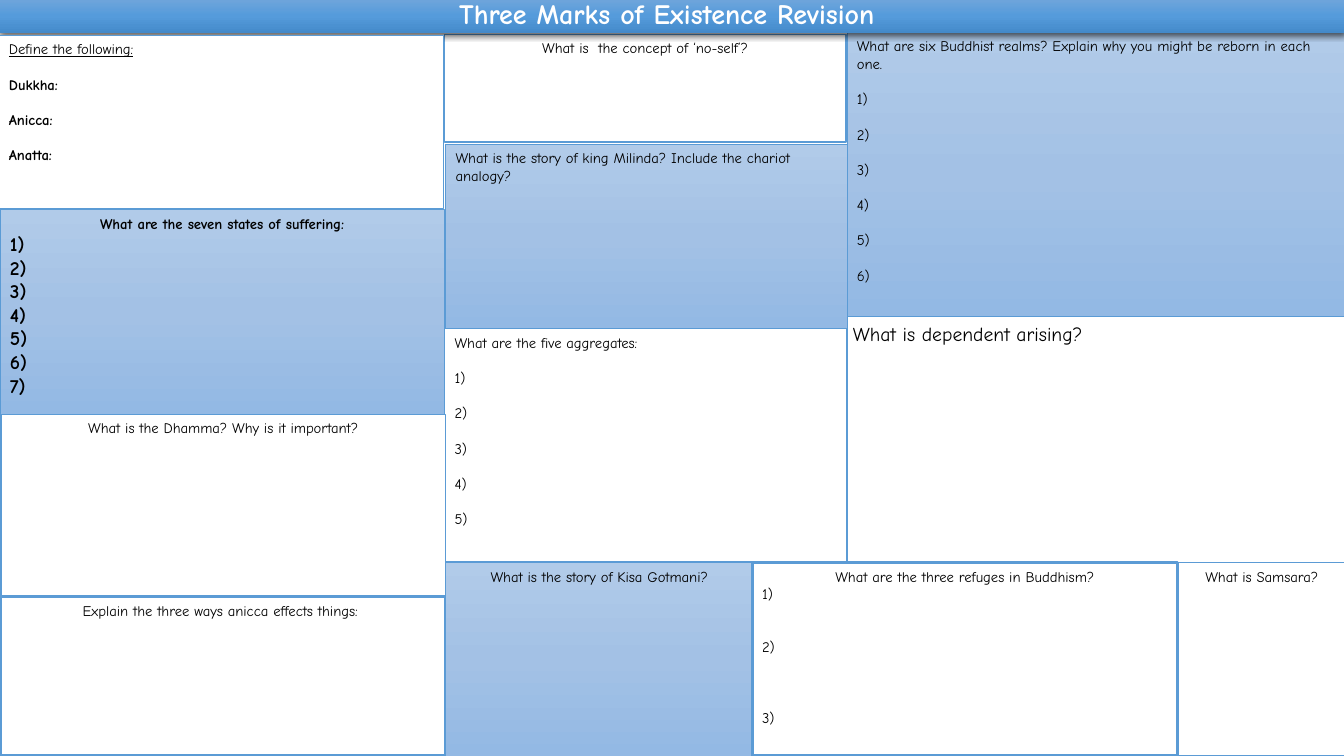
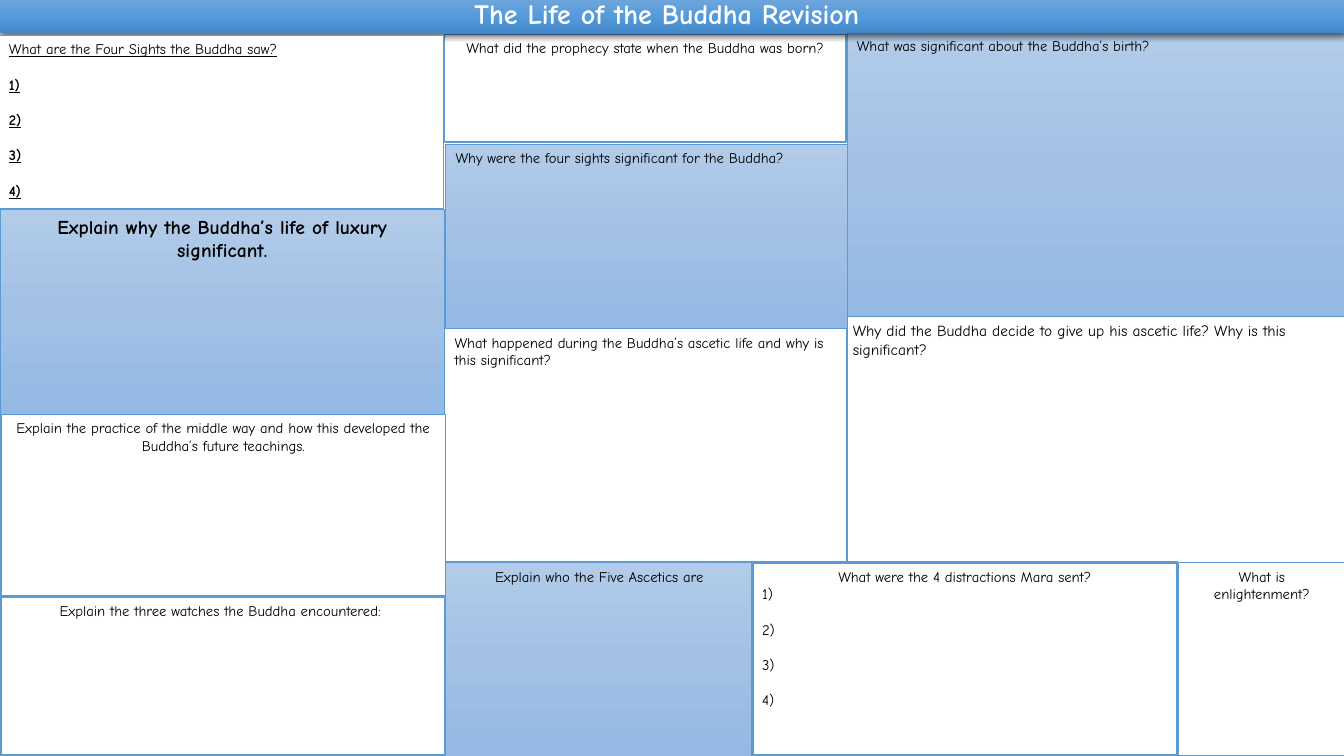
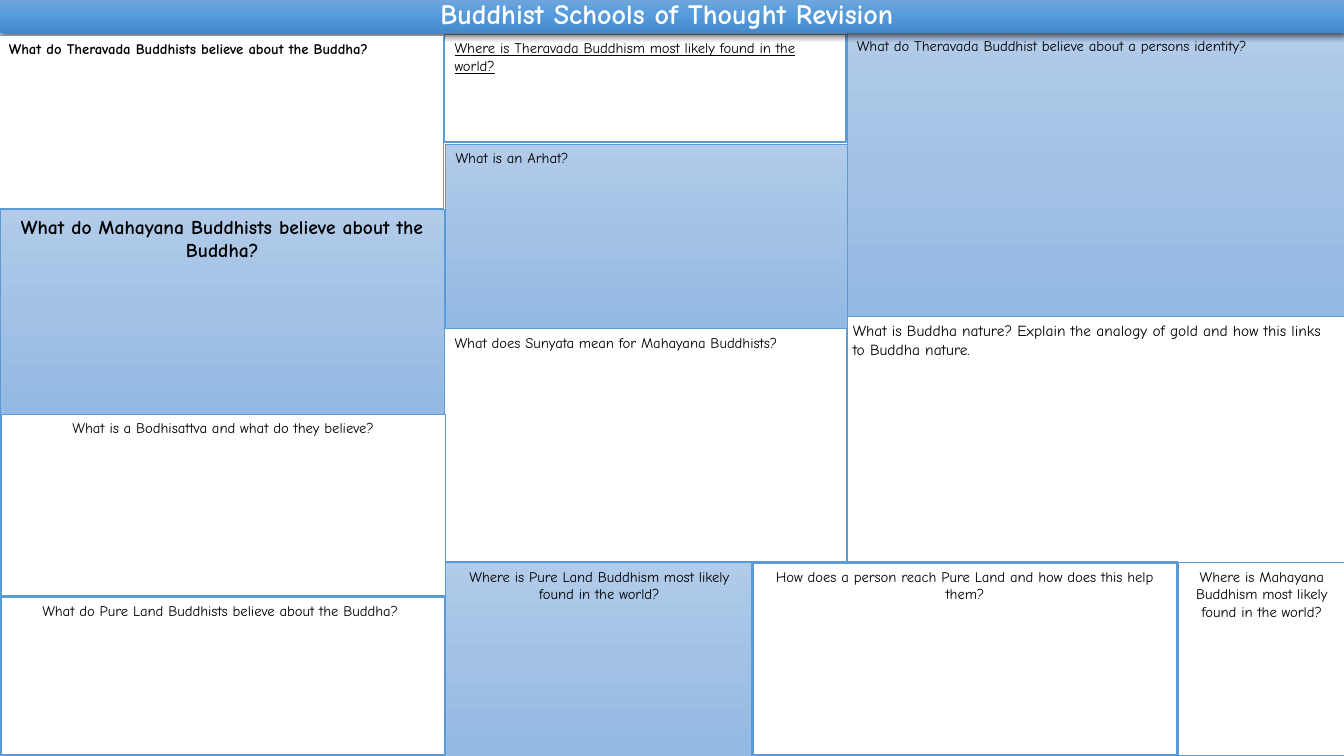
from dataclasses import dataclass
from pptx import Presentation
from pptx.dml.color import RGBColor
from pptx.enum.shapes import MSO_SHAPE
from pptx.enum.text import MSO_ANCHOR, PP_ALIGN
from pptx.oxml import parse_xml
from pptx.oxml.ns import nsdecls
from pptx.util import Inches, Pt

HUES = {"ink": "000000", "page": "FFFFFF", "edge": "5B9BD5"}
FADES = {
    "tint": ("B1CBE9", "A3C1E5", "93B9E4"),
    "band": ("71A6DB", "559BDB", "448ACA"),
}
FONT = "Comic Neue"
LEAD = 12.6
LEFT, MID = PP_ALIGN.LEFT, PP_ALIGN.CENTER


@dataclass
class Note:
    text: str
    items: tuple = ()
    gaps: tuple = ()
    size: float = 10.5
    marks: str = ""
    sub: float = 10.5
    style: str = ""
    align: object = None


def count(last):
    return tuple(f"{n})" for n in range(1, last + 1))


TILES = {
    "five": ((4.41, 3.26, 3.99, 2.31), "page", 1, LEFT),
    "way": ((0.01, 4.11, 4.41, 1.81), "page", 1, MID),
    "realm": ((8.4, 0.32, 4.94, 2.82), "tint", 0.5, LEFT),
    "self": ((4.41, 0.34, 3.98, 1.07), "page", 1, MID),
    "title": ((0, -0.02, 13.33, 0.35), "band", 0, MID),
    "terms": ((-0.01, 0.35, 4.41, 1.72), "page", 1, LEFT),
    "pain": ((0, 2.08, 4.41, 2.03), "tint", 0.5, MID),
    "tale": ((4.42, 1.43, 3.98, 1.83), "tint", 0.5, LEFT),
    "three": ((0, 5.92, 4.42, 1.58), "page", 2.25, MID),
    "who": ((4.42, 5.58, 3.05, 1.92), "tint", 0.5, MID),
    "aids": ((7.46, 5.58, 4.22, 1.92), "page", 2.25, MID),
    "goal": ((11.69, 5.58, 1.65, 1.92), "page", 1, MID),
}
CAUSE = (8.36, 3.14, 4.97, 2.29)

PAGES = [
    {
        "title": "Three Marks of Existence Revision ",
        "five": Note("What are the five aggregates:", count(5), (1,) * 5),
        "way": Note("What is the Dhamma? Why is it important?"),
        "realm": Note("What are six Buddhist realms? Explain why you might be reborn in each one.",
                      count(6), (1,) * 6),
        "self": Note("What is  the concept of ‘no-self’?"),
        "terms": Note("Define the following:", ("Dukkha:", "Anicca:", "Anatta:"),
                      (1,) * 3, marks="u", style="b"),
        "pain": Note("What are the seven states of suffering:", count(7), (0,) * 7,
                     marks="b", sub=14, style="b"),
        "tale": Note("What is the story of king Milinda? Include the chariot analogy?"),
        "three": Note("Explain the three ways anicca effects things: "),
        "who": Note("What is the story of Kisa Gotmani?"),
        "aids": Note("What are the three refuges in Buddhism?", count(3), (0, 2, 3)),
        "goal": Note("What is Samsara?"),
        "cause": Note("What is dependent arising?", size=14),
    },
    {
        "title": "The Life of the Buddha Revision ",
        "five": Note("What happened during the Buddha’s ascetic life and why is this significant?"),
        "way": Note("Explain the practice of the middle way and how this developed "
                    "the Buddha’s future teachings."),
        "realm": Note("What was significant about the Buddha’s birth?"),
        "self": Note("What did the prophecy state when the Buddha was born?"),
        "terms": Note("What are the Four Sights the Buddha saw?", count(4), (1,) * 4,
                      marks="u", style="bu"),
        "pain": Note("Explain why the Buddha’s life of luxury significant.", size=14, marks="b"),
        "tale": Note("Why were the four sights significant for the Buddha?"),
        "three": Note("Explain the three watches the Buddha encountered: "),
        "who": Note("Explain who the Five Ascetics are"),
        "aids": Note("What were the 4 distractions Mara sent?", count(4), (0, 1, 1, 1)),
        "goal": Note("What is enlightenment?"),
        "cause": Note("Why did the Buddha decide to give up his ascetic life? "
                      "Why is this significant?", size=11),
    },
    {
        "title": "Buddhist Schools of Thought Revision ",
        "five": Note("What does Sunyata mean for Mahayana Buddhists?"),
        "way": Note("What is a Bodhisattva and what do they believe?"),
        "realm": Note("What do Theravada Buddhist believe about a persons identity?"),
        "self": Note("Where is Theravada Buddhism most likely found in the world?",
                     marks="u", align=LEFT),
        "terms": Note("What do Theravada Buddhists believe about the Buddha?", marks="b"),
        "pain": Note("What do Mahayana Buddhists believe about the Buddha?", size=14, marks="b"),
        "tale": Note("What is an Arhat?"),
        "three": Note("What do Pure Land Buddhists believe about the Buddha? "),
        "who": Note("Where is Pure Land Buddhism most likely found in the world?"),
        "aids": Note("How does a person reach Pure Land and how does this help them?"),
        "goal": Note("Where is Mahayana Buddhism most likely found in the world?"),
        "cause": Note("What is Buddha nature? Explain the analogy of gold and how this links "
                      "to Buddha nature.", size=11),
    },
]


class Deck:
    def __init__(self):
        self.file = Presentation()
        self.file.slide_width = Inches(13.33)
        self.file.slide_height = Inches(7.5)
        self.slide = None

    def page(self):
        self.slide = self.file.slides.add_slide(self.file.slide_layouts[6])

    def fade(self, shape, name):
        stops = "".join(
            f'<a:gs pos="{n * 50000}"><a:srgbClr val="{hue}"/></a:gs>'
            for n, hue in enumerate(FADES[name]))
        shape.element.spPr.insert(2, parse_xml(
            f'<a:gradFill {nsdecls("a")} rotWithShape="1"><a:gsLst>{stops}</a:gsLst>'
            '<a:lin ang="5400000" scaled="0"/></a:gradFill>'))

    def rect(self, at, fill, width):
        shape = self.slide.shapes.add_shape(MSO_SHAPE.RECTANGLE, *map(Inches, at))
        if fill in FADES:
            self.fade(shape, fill)
        else:
            shape.fill.solid()
            shape.fill.fore_color.rgb = RGBColor.from_string(HUES[fill])
        if width:
            shape.line.color.rgb = RGBColor.from_string(HUES["edge"])
            shape.line.width = Pt(width)
        else:
            shape.line.fill.background()
        shape.shadow.inherit = False
        return shape

    def words(self, para, text, size, marks="", hue="ink"):
        run = para.add_run()
        run.text = text
        font = run.font
        font.name, font.size = FONT, Pt(size)
        font.bold, font.underline = "b" in marks, "u" in marks
        font.color.rgb = RGBColor.from_string(HUES[hue])

    def fill(self, shape, note, align):
        frame = shape.text_frame
        frame.word_wrap = True
        frame.vertical_anchor = MSO_ANCHOR.TOP
        head = frame.paragraphs[0]
        head.alignment = align if note.align is None else note.align
        self.words(head, note.text, note.size, note.marks)
        for text, gap in zip(note.items, note.gaps):
            para = frame.add_paragraph()
            para.alignment = LEFT
            para.space_before = Pt(gap * LEAD)
            self.words(para, text, note.sub, note.style)

    def tile(self, name, note):
        at, fill, width, align = TILES[name]
        self.fill(self.rect(at, fill, width), note, align)

    def title(self, text):
        at, fill, width, align = TILES["title"]
        band = self.rect(at, fill, width)
        glow = band.element.spPr.find(
            "{http://schemas.openxmlformats.org/drawingml/2006/main}effectLst")
        glow.append(parse_xml(
            f'<a:outerShdw {nsdecls("a")} blurRad="{int(Pt(4.5))}" dist="{int(Pt(1.5))}" '
            'dir="5400000" algn="ctr" rotWithShape="0"><a:srgbClr val="000000">'
            '<a:alpha val="63000"/></a:srgbClr></a:outerShdw>'))
        frame = band.text_frame
        frame.word_wrap = True
        frame.vertical_anchor = MSO_ANCHOR.MIDDLE
        para = frame.paragraphs[0]
        para.alignment, para.line_spacing = align, 0.9
        self.words(para, text, 20, "b", "page")

    def label(self, at, note):
        self.fill(self.slide.shapes.add_textbox(*map(Inches, at)), note, LEFT)


def main():
    deck = Deck()
    for notes in PAGES:
        deck.page()
        for name in TILES:
            if name == "title":
                deck.title(notes[name])
            else:
                deck.tile(name, notes[name])
        deck.label(CAUSE, notes["cause"])
    deck.file.save("out.pptx")


if __name__ == "__main__":
    main()
